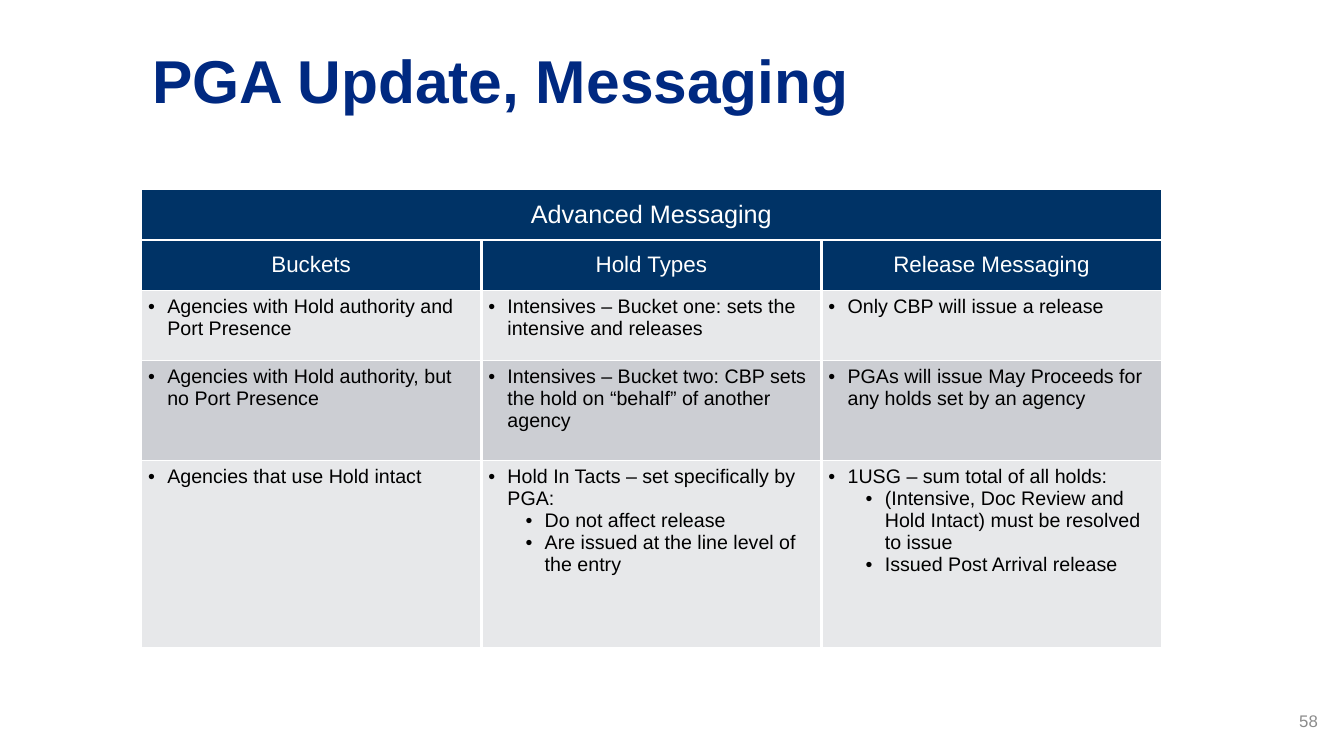
from lxml.etree import SubElement
from pptx import Presentation
from pptx.dml.color import RGBColor
from pptx.enum.text import MSO_ANCHOR as Anchor, PP_ALIGN as Align
from pptx.oxml.ns import qn
from pptx.util import Inches, Pt

NAVY, WHITE, BLACK = "003366", "FFFFFF", "000000"
LIGHT, MEDIUM = "E7E8EA", "CCCED3"
HEADINGS = ["Buckets", "Hold Types", "Release Messaging"]
ROWS = [
    [["Agencies with Hold authority and Port Presence"],
     ["Intensives – Bucket one: sets the intensive and releases"],
     ["Only CBP will issue a release"]],
    [["Agencies with Hold authority, but no Port Presence"],
     ["Intensives – Bucket two: CBP sets the hold on “behalf” of another agency"],
     ["PGAs will issue May Proceeds for any holds set by an agency"]],
    [["Agencies that use Hold intact"],
     ["Hold In Tacts – set specifically by PGA:", "Do not affect release",
      "Are issued at the line level of the entry"],
     ["1USG – sum total of all holds:",
      "(Intensive, Doc Review and Hold Intact) must be resolved to issue",
      "Issued Post Arrival release"]],
]


def color(value):
    return RGBColor.from_string(value)


class SlideBuilder:
    font_name = "Arial"
    grid = 100

    def __init__(self, presentation):
        self.column = presentation.slide_width / self.grid
        self.row = presentation.slide_height / self.grid
        self.slide = presentation.slides.add_slide(presentation.slide_layouts[6])

    def place(self, left, top, width, height):
        return (round(left * self.column), round(top * self.row),
                round(width * self.column), round(height * self.row))

    def style(self, paragraph, size, ink, align=Align.LEFT, bold=False):
        paragraph.alignment = align
        font = paragraph.font
        font.name, font.size, font.bold = self.font_name, Pt(size), bold
        font.color.rgb = color(ink)

    def text(self, area, words, size, ink, anchor, align=Align.LEFT, bold=False, spacing=1.0):
        frame = self.slide.shapes.add_textbox(*self.place(*area)).text_frame
        frame.word_wrap = True
        frame.vertical_anchor = anchor
        frame.margin_top = frame.margin_bottom = 0
        paragraph = frame.paragraphs[0]
        paragraph.text = words
        paragraph.line_spacing = spacing
        self.style(paragraph, size, ink, align, bold)

    def table(self, left, top, column_width, row_heights, columns):
        area = self.place(left, top, column_width * columns, sum(row_heights))
        table = self.slide.shapes.add_table(len(row_heights), columns, *area).table
        table.first_row = table.horz_banding = False
        for column in table.columns:
            column.width = round(column_width * self.column)
        for row, height in zip(table.rows, row_heights):
            row.height = round(height * self.row)
        return table

    def cell(self, cell, fill, left_line, right_line):
        cell.margin_left = cell.margin_right = Inches(0.07)
        cell.margin_top = cell.margin_bottom = Inches(0.05)
        properties = cell._tc.get_or_add_tcPr()
        for side, width in zip("LRTB", (left_line, right_line, 1, 1)):
            line = SubElement(properties, qn(f"a:ln{side}"), w=str(Pt(width)))
            solid = SubElement(line, qn("a:solidFill"))
            SubElement(solid, qn("a:srgbClr"), val=WHITE)
        cell.fill.solid()
        cell.fill.fore_color.rgb = color(fill)

    def heading(self, cell, words, size):
        cell.vertical_anchor = Anchor.MIDDLE
        cell.text = words
        self.style(cell.text_frame.paragraphs[0], size, WHITE, Align.CENTER)

    def bullets(self, cell, items):
        cell.text = "\n".join(items)
        for level, paragraph in zip([0] + [1] * len(items), cell.text_frame.paragraphs):
            paragraph.level = level
            properties = paragraph._p.get_or_add_pPr()
            properties.set("marL", str(Inches(0.56 if level else 0.19)))
            properties.set("indent", str(-Inches(0.19)))
            SubElement(properties, qn("a:buFont"), typeface=self.font_name)
            SubElement(properties, qn("a:buChar"), char="•")
            self.style(paragraph, 14, BLACK)


def main():
    presentation = Presentation()
    presentation.slide_width, presentation.slide_height = Inches(13.33), Inches(7.5)
    builder = SlideBuilder(presentation)
    builder.text((10.58, 0.13, 76.89, 15.33), "PGA Update, Messaging", 43.2, "002981",
                 Anchor.BOTTOM, bold=True, spacing=0.9)
    builder.text((89.95, 92.67, 8.85, 5.33), "58", 12, "8C8C8C", Anchor.MIDDLE, Align.RIGHT)

    table = builder.table(10.5, 25.07, 25.31, [6.67, 6.67, 9.33, 13.2, 24.67], len(HEADINGS))
    last = len(HEADINGS) - 1
    for row, fill in enumerate([NAVY, NAVY, LIGHT, MEDIUM, LIGHT]):
        for column in range(len(HEADINGS)):
            builder.cell(table.cell(row, column), fill,
                         2.25 if row and column else 1,
                         2.25 if row and column < last else 1)
    table.cell(0, 0).merge(table.cell(0, last))
    builder.heading(table.cell(0, 0), "Advanced Messaging", 18)
    for column, words in enumerate(HEADINGS):
        builder.heading(table.cell(1, column), words, 16)
    for row, entries in enumerate(ROWS, start=2):
        for column, items in enumerate(entries):
            builder.bullets(table.cell(row, column), items)
    presentation.save("out.pptx")


if __name__ == "__main__":
    main()
